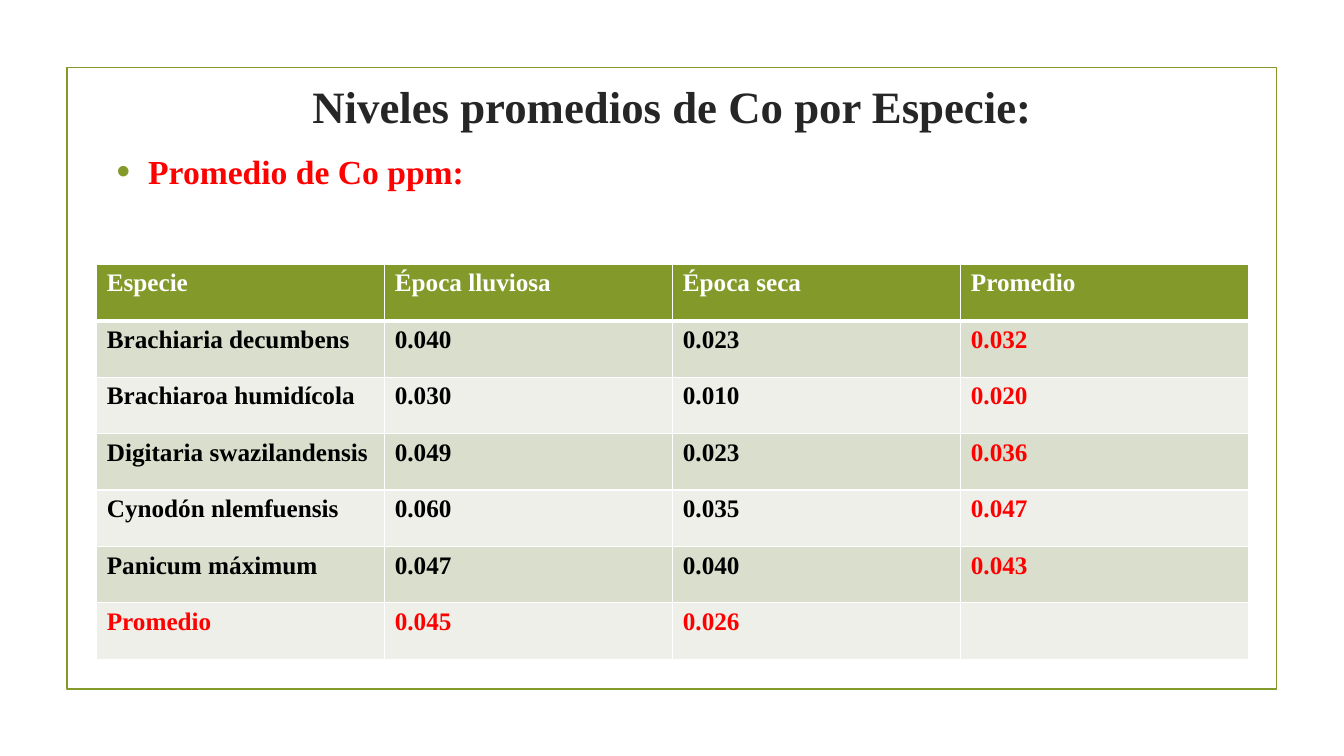
from dataclasses import dataclass

from lxml.etree import SubElement as Sub
from pptx import Presentation
from pptx.dml.color import RGBColor as RGB
from pptx.enum.shapes import MSO_SHAPE as Shape
from pptx.enum.text import MSO_ANCHOR as Anchor, PP_ALIGN as Align
from pptx.oxml.ns import qn
from pptx.util import Pt

HUES = {
    "olive": "83992A",
    "dark": "262626",
    "red": "FF0000",
    "black": "000000",
    "white": "FFFFFF",
    "odd": "D9DECD",
    "even": "EDEFE8",
}
FACE = "Times New Roman"


@dataclass
class Label:
    text: str
    left: float
    top: float
    width: float
    height: float
    size: float
    hue: str
    anchor: Anchor
    bullet: bool = False


LABELS = [
    Label("Niveles promedios de Co por Especie:", 102.2, 49, 756, 53.3, 32, "dark", Anchor.MIDDLE),
    Label("Promedio de Co ppm:", 76.3, 104.5, 815.8, 60, 24, "red", Anchor.TOP, True),
]

ROWS = [
    ("Especie", "Época lluviosa", "Época seca", "Promedio"),
    ("Brachiaria decumbens", "0.040", "0.023", "0.032"),
    ("Brachiaroa humidícola", "0.030", "0.010", "0.020"),
    ("Digitaria swazilandensis", "0.049", "0.023", "0.036"),
    ("Cynodón nlemfuensis", "0.060", "0.035", "0.047"),
    ("Panicum máximum", "0.047", "0.040", "0.043"),
    ("Promedio", "0.045", "0.026", ""),
]
COL_W, ROW_H = 205.75, 40.32


def style(para, size: float, hue: str) -> None:
    font = para.font
    font.name, font.size, font.bold = FACE, Pt(size), True
    font.color.rgb = RGB.from_string(HUES[hue])


def add_dot(para) -> None:
    props = para._p.get_or_add_pPr()
    props.set("marL", str(Pt(22.5)))
    props.set("indent", str(-Pt(22.5)))
    tint = Sub(props, qn("a:buClr"))
    Sub(tint, qn("a:srgbClr"), val=HUES["olive"])
    Sub(props, qn("a:buSzPct"), val="115000")
    Sub(props, qn("a:buFont"), typeface="Arial")
    Sub(props, qn("a:buChar"), char="•")


def add_label(slide, item: Label) -> None:
    box = slide.shapes.add_textbox(Pt(item.left), Pt(item.top), Pt(item.width), Pt(item.height))
    frame = box.text_frame
    frame.word_wrap = True
    frame.vertical_anchor = item.anchor
    para = frame.paragraphs[0]
    para.text = item.text
    if item.bullet:
        add_dot(para)
    else:
        para.alignment = Align.CENTER
    style(para, item.size, item.hue)


def set_edges(cell, row: int) -> None:
    props = cell._tc.get_or_add_tcPr()
    for side in "LRTB":
        heavy = (side == "B" and row == 0) or (side == "T" and row == 1)
        edge = Sub(props, qn(f"a:ln{side}"), w=str(Pt(3 if heavy else 1)))
        Sub(Sub(edge, qn("a:solidFill")), qn("a:srgbClr"), val=HUES["white"])


def fill_cell(cell, text: str, row: int, col: int) -> None:
    set_edges(cell, row)
    back = "olive" if row == 0 else "odd" if row % 2 else "even"
    cell.fill.solid()
    cell.fill.fore_color.rgb = RGB.from_string(HUES[back])
    mean = row == len(ROWS) - 1 or col == len(ROWS[0]) - 1
    para = cell.text_frame.paragraphs[0]
    para.text = text
    style(para, 18, "white" if row == 0 else "red" if mean else "black")


def add_grid(slide) -> None:
    rows, cols = len(ROWS), len(ROWS[0])
    table = slide.shapes.add_table(
        rows, cols, Pt(69.1), Pt(188.8), Pt(cols * COL_W), Pt(rows * ROW_H)
    ).table
    for col in table.columns:
        col.width = Pt(COL_W)
    for r, line in enumerate(ROWS):
        table.rows[r].height = Pt(ROW_H)
        for c, text in enumerate(line):
            fill_cell(table.cell(r, c), text, r, c)


def main() -> None:
    deck = Presentation()
    deck.slide_width, deck.slide_height = Pt(960), Pt(540)
    slide = deck.slides.add_slide(deck.slide_layouts[6])

    # Frame
    frame = slide.shapes.add_shape(Shape.RECTANGLE, Pt(47.8), Pt(48.2), Pt(864), Pt(444))
    frame.shadow.inherit = False
    frame.fill.background()
    frame.line.color.rgb = RGB.from_string(HUES["olive"])
    frame.line.width = Pt(1.25)

    # Title and bullet
    for item in LABELS:
        add_label(slide, item)

    # Cobalt levels
    add_grid(slide)
    deck.save("out.pptx")


if __name__ == "__main__":
    main()
